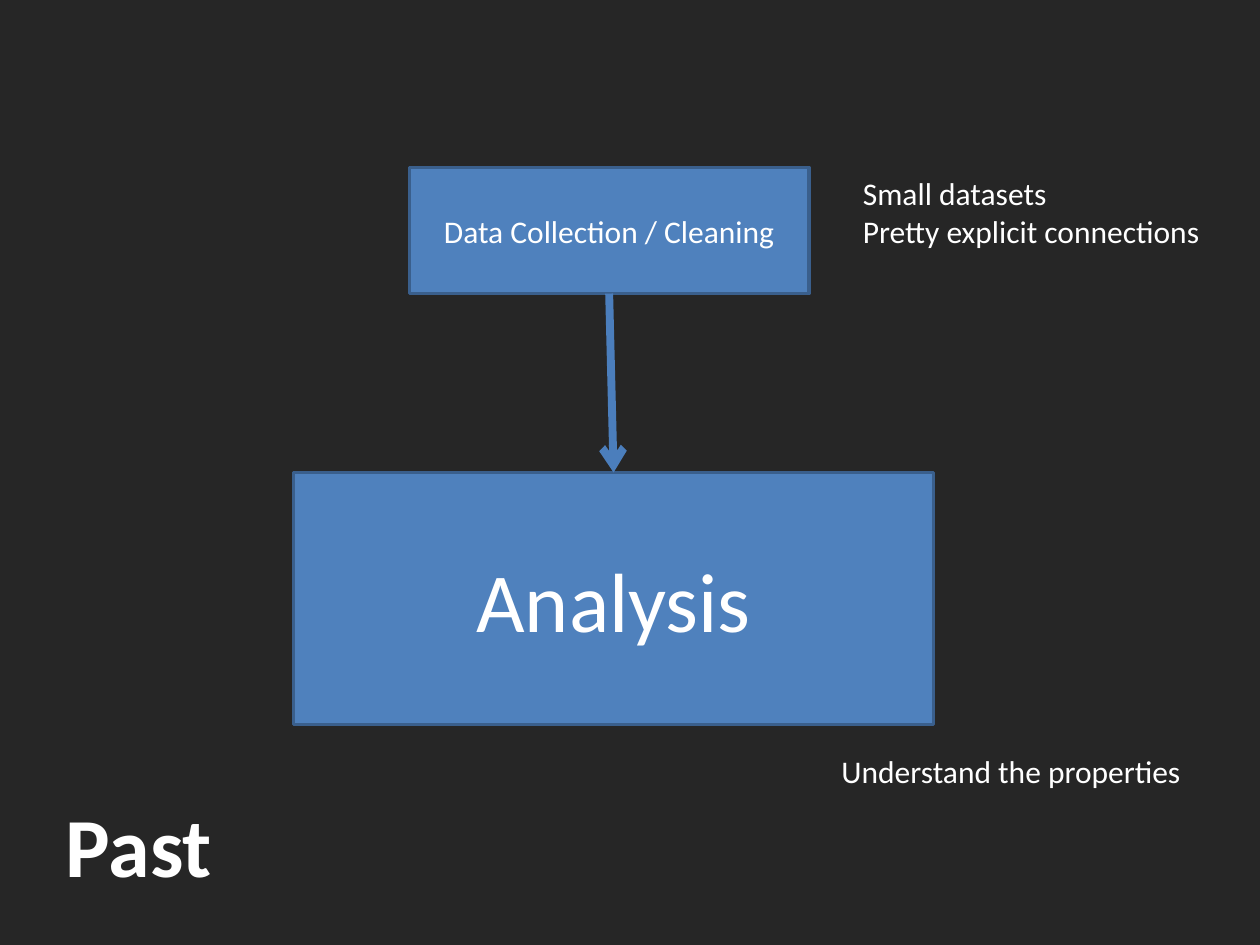
from dataclasses import dataclass

from lxml.etree import SubElement
from pptx import Presentation
from pptx.dml.color import RGBColor
from pptx.enum.shapes import MSO_CONNECTOR, MSO_SHAPE
from pptx.enum.text import MSO_ANCHOR, MSO_AUTO_SIZE, PP_ALIGN
from pptx.oxml.ns import qn
from pptx.shapes.autoshape import Shape
from pptx.slide import Slide
from pptx.text.text import TextFrame
from pptx.util import Inches, Pt


@dataclass(frozen=True)
class Theme:
    font: str = "Calibri"
    back: RGBColor = RGBColor(0x26, 0x26, 0x26)
    text: RGBColor = RGBColor(0xFF, 0xFF, 0xFF)
    fill: RGBColor = RGBColor(0x4F, 0x81, 0xBD)
    edge: RGBColor = RGBColor(0x3A, 0x5F, 0x8C)
    arrow: RGBColor = RGBColor(0x4B, 0x7E, 0xBC)
    body: Pt = Pt(18)
    large: Pt = Pt(48)
    border: Pt = Pt(2)
    stroke: Pt = Pt(4.5)


@dataclass(frozen=True)
class Block:
    text: str
    left: float
    top: float
    width: float
    height: float
    size: Pt

    def place(self) -> tuple[Inches, ...]:
        return tuple(Inches(n) for n in (self.left, self.top, self.width, self.height))


THEME = Theme()
COLLECT = Block("Data Collection / Cleaning", 3.25, 1.33, 3.17, 1, THEME.body)
ANALYSIS = Block("Analysis", 2.33, 3.75, 5.08, 2, THEME.large)
NOTES = (
    Block("Small datasets\nPretty explicit connections", 6.75, 1.33, 3.08, 0.71, THEME.body),
    Block("Understand the properties", 6.58, 5.92, 3.08, 0.4, THEME.body),
)
TITLE = Block("Past", 0.42, 6.25, 3.08, 0.91, THEME.large)


def write(frame: TextFrame, block: Block, align: PP_ALIGN, anchor: MSO_ANCHOR,
          bold: bool = False) -> None:
    frame.text = block.text
    frame.word_wrap = True
    frame.vertical_anchor = anchor
    for para in frame.paragraphs:
        para.alignment = align
        for run in para.runs:
            font = run.font
            font.name, font.size, font.bold = THEME.font, block.size, bold
            font.color.rgb = THEME.text


def add_step(slide: Slide, block: Block) -> Shape:
    box = slide.shapes.add_shape(MSO_SHAPE.RECTANGLE, *block.place())
    box.shadow.inherit = False
    box.fill.solid()
    box.fill.fore_color.rgb = THEME.fill
    box.line.color.rgb = THEME.edge
    box.line.width = THEME.border
    write(box.text_frame, block, PP_ALIGN.CENTER, MSO_ANCHOR.MIDDLE)
    return box


def add_note(slide: Slide, block: Block) -> None:
    frame = slide.shapes.add_textbox(*block.place()).text_frame
    write(frame, block, PP_ALIGN.LEFT, MSO_ANCHOR.TOP)
    frame.auto_size = MSO_AUTO_SIZE.SHAPE_TO_FIT_TEXT


def add_arrow(slide: Slide, start: Shape, end: Shape) -> None:
    """Join the bottom of one step to the top of the next."""
    arrow = slide.shapes.add_connector(MSO_CONNECTOR.STRAIGHT, 0, 0, 0, 0)
    arrow.begin_connect(start, 2)
    arrow.end_connect(end, 0)
    arrow.line.color.rgb = THEME.arrow
    arrow.line.width = THEME.stroke
    SubElement(arrow.line._get_or_add_ln(), qn("a:tailEnd"), type="arrow")
    SubElement(arrow._element.spPr, qn("a:effectLst"))


def set_title(slide: Slide, block: Block) -> None:
    title = slide.shapes.title
    title.left, title.top, title.width, title.height = block.place()
    write(title.text_frame, block, PP_ALIGN.LEFT, MSO_ANCHOR.TOP, bold=True)
    title.text_frame.auto_size = MSO_AUTO_SIZE.SHAPE_TO_FIT_TEXT


def main() -> None:
    deck = Presentation()
    deck.slide_width, deck.slide_height = Inches(10), Inches(7.5)
    slide = deck.slides.add_slide(deck.slide_layouts.get_by_name("Title Only"))
    slide.background.fill.solid()
    slide.background.fill.fore_color.rgb = THEME.back
    collect, analysis = (add_step(slide, block) for block in (COLLECT, ANALYSIS))
    add_arrow(slide, collect, analysis)
    for note in NOTES:
        add_note(slide, note)
    set_title(slide, TITLE)
    deck.save("out.pptx")


if __name__ == "__main__":
    main()
